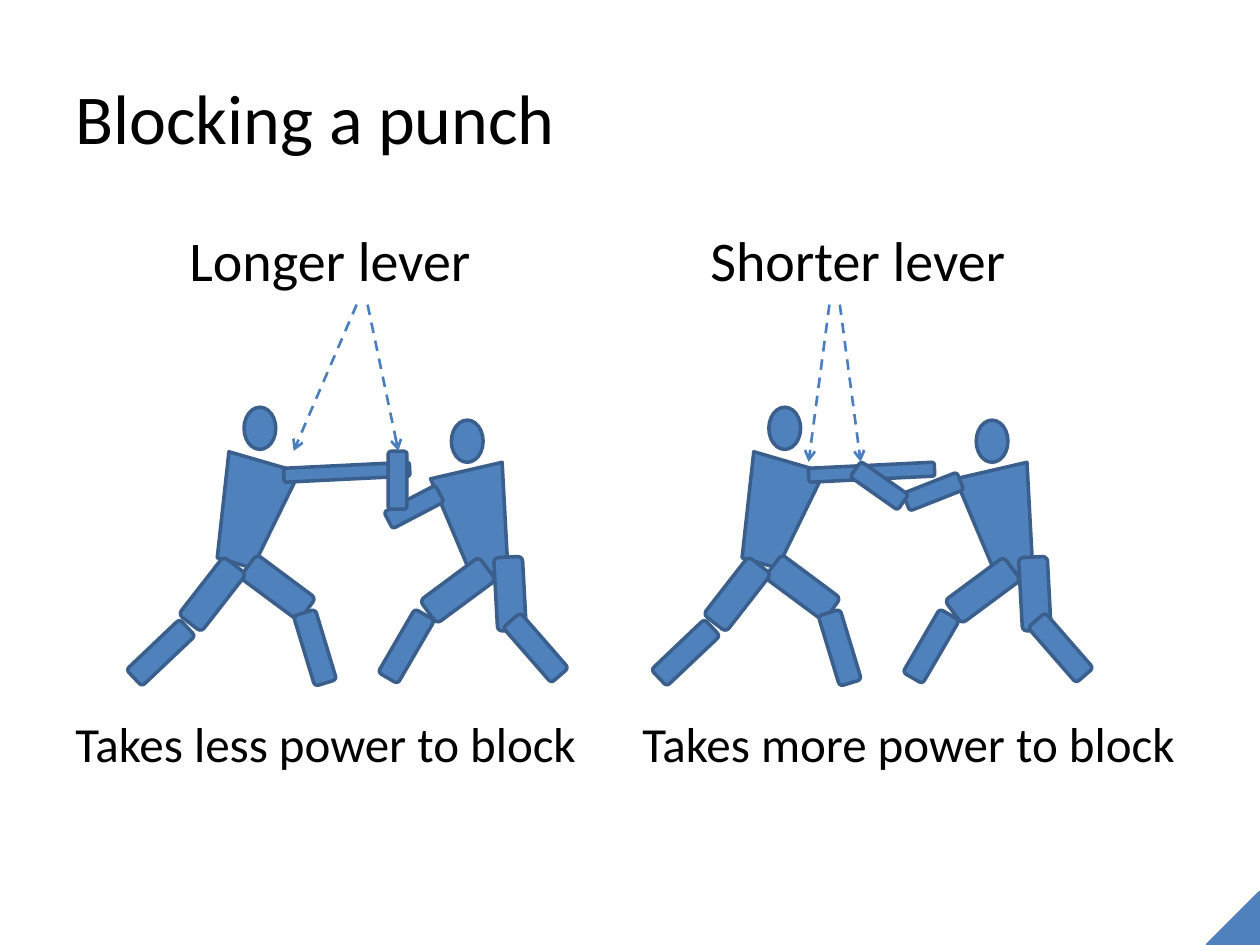
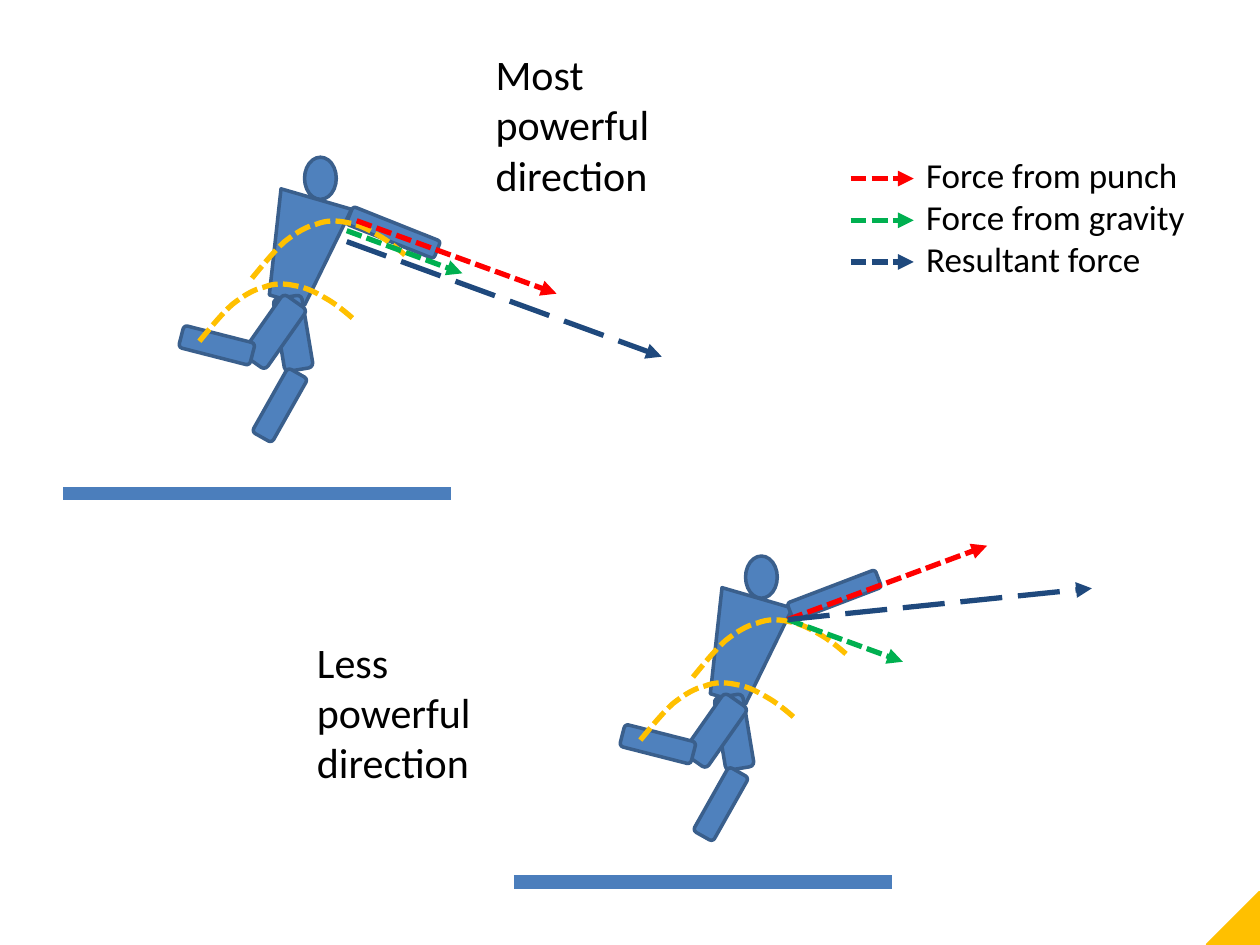
"""Build two slides on levers and forces in blocking and punching."""
from pptx import Presentation
from pptx.dml.color import RGBColor
from pptx.enum.dml import MSO_LINE
from pptx.enum.shapes import MSO_CONNECTOR, MSO_SHAPE
from pptx.enum.text import MSO_ANCHOR
from pptx.oxml.ns import qn
from pptx.util import Cm, Pt

FONT = "Calibri"
BLACK, BLUE, OUTLINE, LINE = "000000", "4F81BD", "3A5F8C", "4B7EBC"
RED, GREEN, NAVY, GOLD = "FF0000", "00B050", "1F497D", "FFC000"
WIDTH, HEIGHT, CORNER = 25.4, 19.05, 1.06

KINDS = {
    "head": (MSO_SHAPE.OVAL, 0.64, 0.85),
    "torso": (MSO_SHAPE.TRAPEZOID, 1.48, 2.12),
    "punch": (MSO_SHAPE.ROUNDED_RECTANGLE, 2.54, 0.28),
    "arm": (MSO_SHAPE.ROUNDED_RECTANGLE, 1.9, 0.38),
    "forearm": (MSO_SHAPE.ROUNDED_RECTANGLE, 1.17, 0.38),
    "thigh": (MSO_SHAPE.ROUNDED_RECTANGLE, 1.48, 0.58),
    "shin": (MSO_SHAPE.ROUNDED_RECTANGLE, 1.48, 0.46),
}

FIGHTERS = [
    ("head", 4.92, 8.21, 0), ("torso", 4.29, 9.27, 16.2),
    ("punch", 5.72, 9.38, 357.2),
    ("thigh", 4.86, 11.56, 36.6), ("thigh", 3.54, 11.69, 127.9),
    ("shin", 2.5, 12.93, 136.5), ("shin", 5.61, 12.83, 73.1),
    ("head", 9.1, 8.47, 0), ("torso", 8.9, 9.46, 347),
    ("thigh", 9.54, 11.68, 86.9), ("thigh", 8.49, 11.61, 143.5),
    ("shin", 7.45, 12.8, 120.2), ("shin", 10.06, 12.83, 48.9),
]
BLOCKS = [
    (0, [("forearm", 7.76, 10.03, 332.4), ("forearm", 7.43, 9.49, 270)]),
    (10.58, [("forearm", 7.65, 9.72, 338.5), ("forearm", 6.56, 9.6, 215.1)]),
]
CAPTIONS = [
    ("\tLonger lever\tShorter lever", 32, 0, (2.3, 12.8)),
    ("Takes less power to block\tTakes more power to block", 28, 240.5, (11.43,)),
]
LEVER_ARROWS = [
    (7.19, 6.14, 5.92, 9.09), (7.41, 6.14, 8.03, 9.09),
    (16.93, 6.14, 17.35, 9.31), (16.72, 6.14, 16.3, 9.31),
]

RUNNER = [
    ("head", 6.14, 3.17, 0), ("torso", 5.34, 3.97, 16.2),
    ("thigh", 5.17, 6.43, 80.5), ("thigh", 4.79, 6.4, 125.1),
    ("shin", 3.63, 6.73, 194.3), ("shin", 4.9, 7.94, 119.4),
]
RUNS = [
    (0, 0, ("arm", 6.98, 4.5, 21.7)),
    (8.89, 8.04, ("arm", 6.98, 3.77, 339.1)),
]
SWINGS = [(4.02, 5.71), (5.08, 4.44)]
SWING_CURVE = [
    (0, 1.17), (0.23, 0.89), (0.46, 0.61), (0.66, 0.43),
    (0.89, 0.25), (1.09, 0.13), (1.3, 0.08), (1.5, 0),
    (1.7, 0), (1.93, 0.05), (2.13, 0.08), (2.34, 0.18),
    (2.54, 0.3), (2.74, 0.41), (2.95, 0.58), (3.15, 0.76),
]
GROUNDS = [(1.27, 9.95, 9.09, 9.95), (10.36, 17.78, 17.98, 17.78)]
FORCES = [
    (RED, 7.19, 4.45, 11.22, 5.92), (GREEN, 6.99, 4.65, 9.32, 5.51),
    (NAVY, 6.99, 4.87, 13.34, 7.19),
    (RED, 15.88, 12.49, 19.9, 11), (GREEN, 15.88, 12.49, 18.2, 13.34),
    (NAVY, 15.88, 12.49, 22.01, 11.86),
]
DIRECTIONS = [
    ("Most powerful direction", 9.74, 0.85),
    ("Less powerful direction", 6.14, 12.7),
]
LEGEND = [("Force from punch", RED), ("Force from gravity", GREEN),
          ("Resultant force", NAVY)]


def rgb(color):
    return RGBColor.from_string(color)


def set_line(line, color, width, dash=None):
    line.color.rgb = rgb(color)
    line.width = Pt(width)
    if dash:
        line.dash_style = dash


def add_text(slide, lines, x, y, w, h, size, anchor=MSO_ANCHOR.TOP):
    tf = slide.shapes.add_textbox(Cm(x), Cm(y), Cm(w), Cm(h)).text_frame
    tf.word_wrap = True
    tf.vertical_anchor = anchor
    tf.text = "\n".join(lines)
    for p in tf.paragraphs:
        p.font.name, p.font.size = FONT, Pt(size)
        p.font.color.rgb = rgb(BLACK)
    return tf


def add_captions(slide):
    tf = add_text(slide, [text for text, *_ in CAPTIONS], 1.27, 4.43, 22.86, 12.57, 28)
    for p, (_, size, before, stops) in zip(tf.paragraphs, CAPTIONS):
        p.font.size, p.space_before = Pt(size), Pt(before)
        p_pr = p._p.get_or_add_pPr()
        tabs = p_pr.makeelement(qn("a:tabLst"), {})
        for stop in stops:
            tabs.append(tabs.makeelement(qn("a:tab"), {"pos": str(Cm(stop)), "algn": "l"}))
        p_pr.find(qn("a:defRPr")).addprevious(tabs)


def add_solid(slide, shape, x, y, w, h, rotation, fill, outline):
    sp = slide.shapes.add_shape(shape, Cm(x), Cm(y), Cm(w), Cm(h))
    sp.shadow.inherit = False
    sp.rotation = rotation
    sp.fill.solid()
    sp.fill.fore_color.rgb = rgb(fill)
    set_line(sp.line, outline, 2)
    return sp


def add_body(slide, parts, dx=0, dy=0):
    for kind, x, y, rotation in parts:
        shape, w, h = KINDS[kind]
        sp = add_solid(slide, shape, x + dx, y + dy, w, h, rotation, BLUE, OUTLINE)
        if kind == "torso":
            sp._element.spPr.find(qn("a:xfrm")).set("flipV", "1")


def add_line(slide, ends, color, width, dash=None, head=None):
    line = slide.shapes.add_connector(MSO_CONNECTOR.STRAIGHT, *map(Cm, ends))
    set_line(line.line, color, width, dash)
    sp_pr = line._element.spPr
    if head:
        ln = sp_pr.find(qn("a:ln"))
        ln.append(ln.makeelement(qn("a:tailEnd"), {"type": head}))
    sp_pr.append(sp_pr.makeelement(qn("a:effectLst"), {}))


def add_swing(slide, x, y):
    points = [(Cm(x + px), Cm(y + py)) for px, py in SWING_CURVE]
    builder = slide.shapes.build_freeform(*points[0])
    builder.add_line_segments(points[1:], close=False)
    sp = builder.convert_to_shape()
    sp.shadow.inherit = False
    sp.fill.background()
    set_line(sp.line, GOLD, 3, MSO_LINE.SQUARE_DOT)
    segments = list(sp._element.spPr.iter(qn("a:lnTo")))
    for i in range(0, len(segments), 3):
        curve = segments[i].makeelement(qn("a:cubicBezTo"), {})
        segments[i].addprevious(curve)
        for segment in segments[i:i + 3]:
            curve.append(segment[0])
            segment.getparent().remove(segment)


def add_corner(slide, color):
    add_solid(slide, MSO_SHAPE.RIGHT_TRIANGLE, WIDTH - CORNER, HEIGHT - CORNER,
              CORNER, CORNER, 270, color, color)


def build_blocking(prs):
    s = prs.slides.add_slide(prs.slide_layouts[6])
    add_captions(s)
    for dx, arms in BLOCKS:
        add_body(s, FIGHTERS + arms, dx)
    add_text(s, ["Blocking a punch"], 1.27, 0.76, 22.86, 3.18, 40, MSO_ANCHOR.MIDDLE)
    for ends in LEVER_ARROWS:
        add_line(s, ends, LINE, 1.5, MSO_LINE.DASH, "arrow")
    add_corner(s, BLUE)


def build_forces(prs):
    s = prs.slides.add_slide(prs.slide_layouts[6])
    for dx, dy, arm in RUNS:
        add_body(s, RUNNER[:2] + [arm] + RUNNER[2:], dx, dy)
        for x, y in SWINGS:
            add_swing(s, x + dx, y + dy)
    for text, x, y in DIRECTIONS:
        add_text(s, [text], x, y, 4.88, 3.33, 24)
    for i, (_, color) in enumerate(LEGEND):
        y = 3.6 + 0.84 * i
        add_line(s, (17.15, y, 18.42, y), color, 3, MSO_LINE.SQUARE_DOT, "triangle")
    add_text(s, [text for text, _ in LEGEND], 18.42, 2.97, 5.92, 2.82, 20)
    for ends in GROUNDS:
        add_line(s, ends, LINE, 7.5)
    for color, *ends in FORCES:
        dash = MSO_LINE.LONG_DASH if color == NAVY else MSO_LINE.SQUARE_DOT
        add_line(s, ends, color, 3, dash, "triangle")
    add_corner(s, GOLD)


def main():
    prs = Presentation()
    prs.slide_width, prs.slide_height = Cm(WIDTH), Cm(HEIGHT)
    build_blocking(prs)
    build_forces(prs)
    prs.save("out.pptx")


if __name__ == "__main__":
    main()
